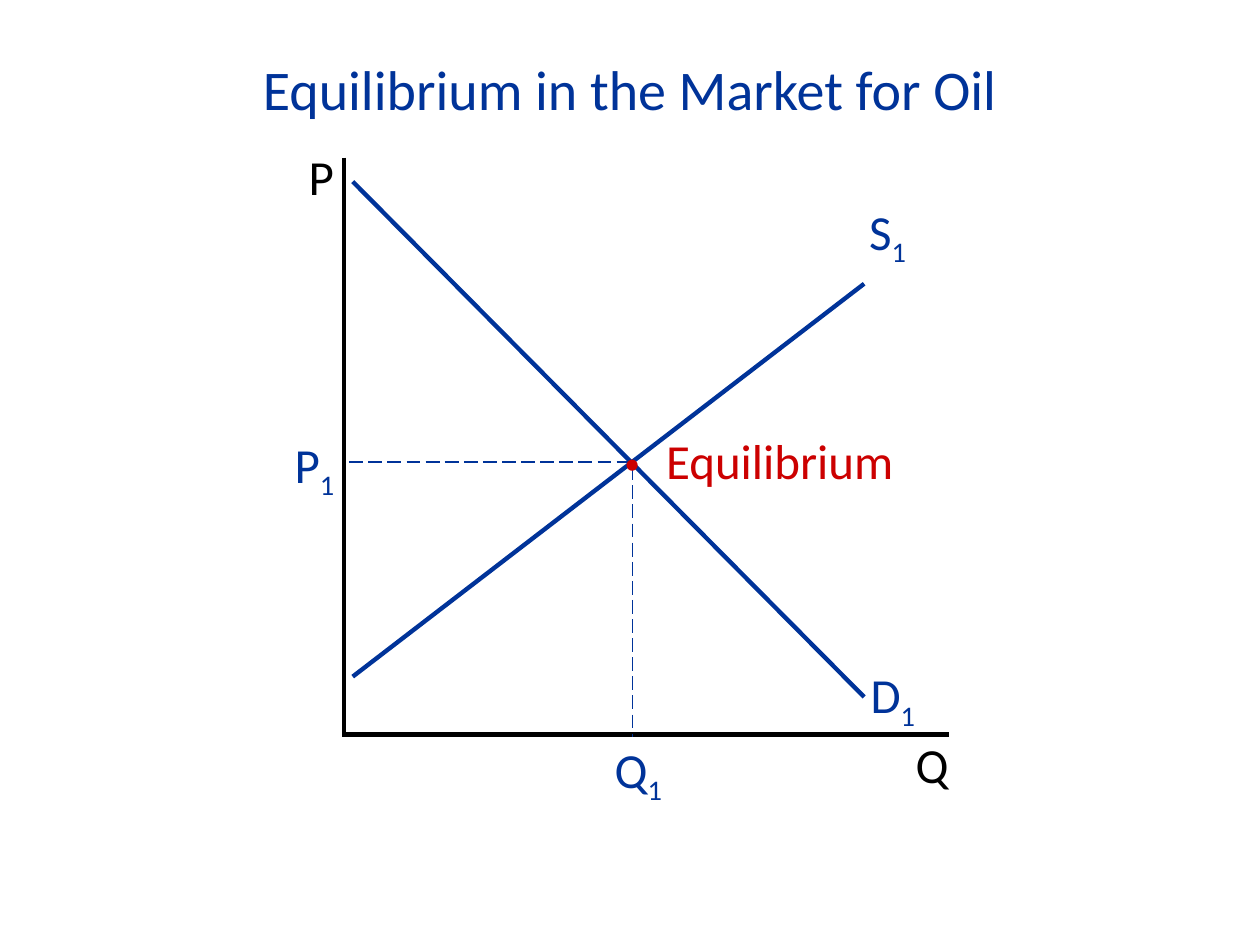
from dataclasses import dataclass

import pptx
import pptx.dml.color
import pptx.enum.dml
import pptx.enum.shapes
import pptx.enum.text
import pptx.oxml.ns
import pptx.util
from lxml import etree

Cm = pptx.util.Cm
Pt = pptx.util.Pt

FONT = "Calibri"
BLUE = "003399"
BLACK = "000000"
RED = "CC0000"


@dataclass
class Line:
    start: tuple[float, float]
    end: tuple[float, float]
    color: str = BLUE
    weight: float = 2.5
    dashed: bool = False


@dataclass
class Label:
    text: str
    left: float
    top: float
    width: float
    height: float
    color: str = BLUE
    subscript: str = ""
    size: int = 28
    spacing: float = 1.0


LINES = [
    Line((7.11, 13.64), (17.42, 5.72)),  # supply
    Line((6.93, 3.18), (6.93, 14.86), BLACK),  # price axis
    Line((6.93, 14.81), (19.13, 14.81), BLACK),  # quantity axis
    Line((7.11, 3.66), (17.42, 14.05)),  # demand
    Line((7.04, 9.32), (12.7, 9.32), weight=1, dashed=True),
    Line((12.75, 9.4), (12.75, 14.86), weight=1, dashed=True),
]

LABELS = [
    Label("D", 17.3, 13.28, 1.47, 1.45, subscript="1"),
    Label("Q", 18.21, 14.68, 1.3, 1.45, BLACK),
    Label("P", 5.97, 3.05, 1.14, 1.24, BLACK, spacing=0.8),
    Label("S", 17.27, 3.94, 1.47, 1.45, subscript="1"),
    Label("P", 5.69, 8.76, 1.47, 1.24, subscript="1", spacing=0.8),
    Label("Q", 12.14, 14.91, 1.91, 1.22, subscript="1", spacing=0.8),
    Label("Equilibrium", 13.18, 8.56, 5.72, 1.45, RED),
    Label("•", 12.34, 8.81, 1.37, 1.02, RED, size=18),
]


def rgb(color: str) -> pptx.dml.color.RGBColor:
    return pptx.dml.color.RGBColor.from_string(color)


def format_paragraph(para, size: int, color: str) -> None:
    para.font.name = FONT
    para.font.size = Pt(size)
    para.font.color.rgb = rgb(color)


def add_title(page, text: str) -> None:
    title = page.shapes.title
    title.left, title.top = Cm(1.78), Cm(0.97)
    title.width, title.height = Cm(21.84), Cm(1.63)
    frame = title.text_frame
    frame.text = text
    frame.vertical_anchor = pptx.enum.text.MSO_ANCHOR.MIDDLE
    para = frame.paragraphs[0]
    para.alignment = pptx.enum.text.PP_ALIGN.CENTER
    format_paragraph(para, 32, BLUE)


def add_line(page, line: Line) -> None:
    connector = page.shapes.add_connector(
        pptx.enum.shapes.MSO_CONNECTOR.STRAIGHT,
        *(Cm(value) for value in line.start + line.end),
    )
    connector.line.color.rgb = rgb(line.color)
    connector.line.width = Pt(line.weight)
    if line.dashed:
        connector.line.dash_style = pptx.enum.dml.MSO_LINE.LONG_DASH
    properties = connector._element.spPr
    etree.SubElement(properties, pptx.oxml.ns.qn("a:effectLst"))


def add_label(page, label: Label) -> None:
    box = page.shapes.add_textbox(
        Cm(label.left), Cm(label.top), Cm(label.width), Cm(label.height)
    )
    box.text_frame.word_wrap = True
    para = box.text_frame.paragraphs[0]
    para.line_spacing = label.spacing
    format_paragraph(para, label.size, label.color)
    para.add_run().text = label.text
    if label.subscript:
        span = para.add_run()
        span.text = label.subscript
        span._r.get_or_add_rPr().set("baseline", "-25000")


def main() -> None:
    deck = pptx.Presentation()
    deck.slide_width, deck.slide_height = Cm(25.4), Cm(19.05)
    page = deck.slides.add_slide(deck.slide_layouts.get_by_name("Title Only"))
    add_title(page, "Equilibrium in the Market for Oil")
    for line in LINES:
        add_line(page, line)
    for label in LABELS:
        add_label(page, label)
    deck.save("out.pptx")


if __name__ == "__main__":
    main()
